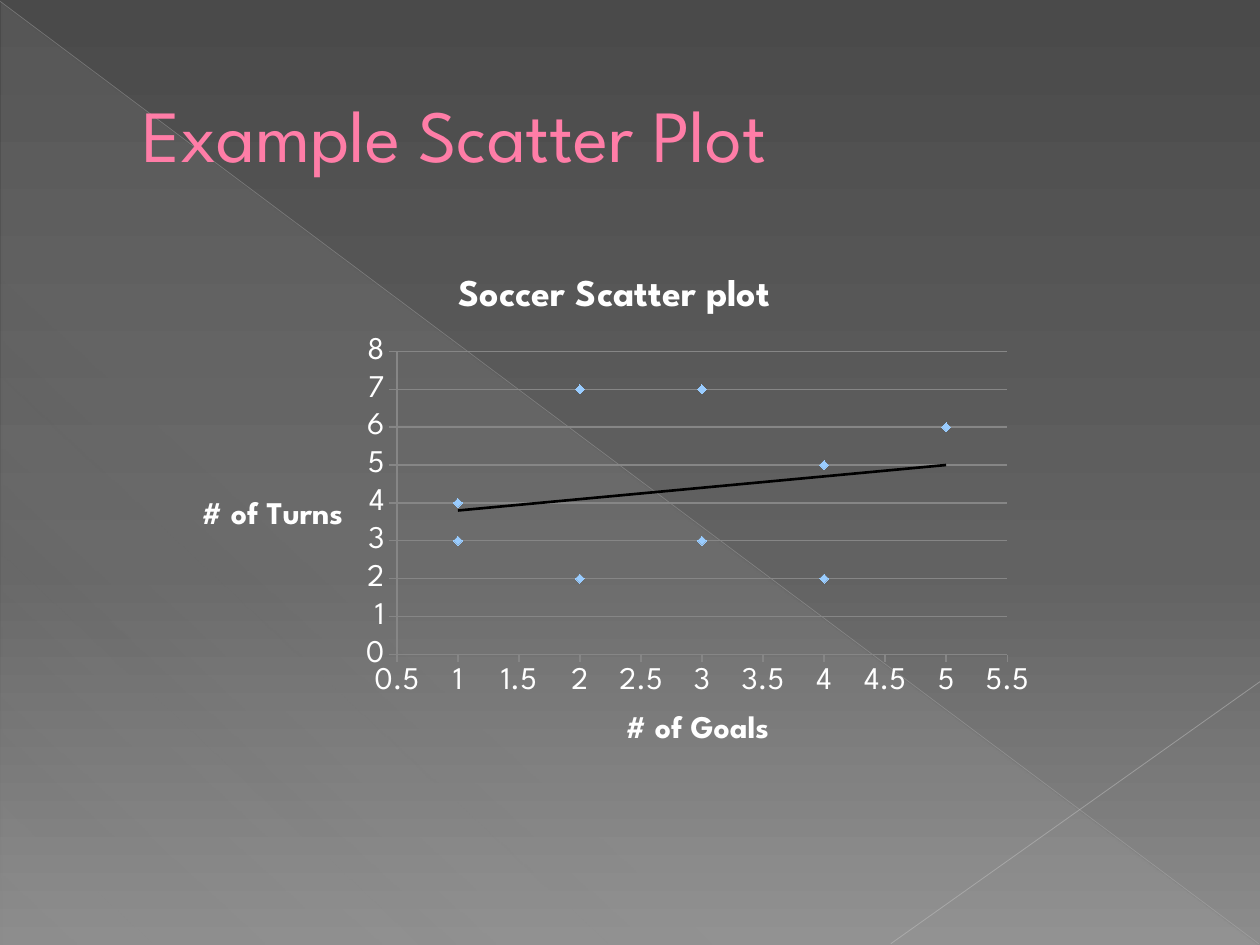
from dataclasses import dataclass
from lxml import etree
from pptx import Presentation
from pptx import util as u
from pptx.chart.data import XyChartData
from pptx.dml.color import RGBColor
from pptx.enum import chart as ch, shapes, text
from pptx.oxml import parse_xml
from pptx.oxml.ns import nsdecls, qn

FONT = "League Spartan"
HUES = {"pink": "FF7DA7", "edge": "B12761", "white": "FFFFFF", "grid": "868686",
        "mark": "99CCFF", "trend": "000000", "dark": "4A4A4A", "mid": "626262",
        "light": "8C8C8C", "pale": "D2D2D2", "slope": "BFBFBF", "rise": "C6C6C6"}
POINTS = [(1, 3), (1, 4), (2, 2), (2, 7), (3, 3), (3, 7), (4, 2), (4, 5), (5, 6)]


@dataclass
class Stop:
    pos: int
    hue: str
    alpha: int = 100


@dataclass
class Ray:
    start: tuple
    end: tuple
    hue: str
    width: float
    alpha: int


@dataclass
class Scale:
    low: float
    high: float
    step: float
    name: str


RAYS = [Ray((0, 0.01), (9.99, 7.49), "slope", 0.39, 35),
        Ray((10, 5.41), (7.07, 7.49), "rise", 0.47, 45)]


def tint(hue: str) -> RGBColor:
    """Return the named colour."""
    return RGBColor.from_string(HUES[hue])


def fade(node, alpha: int) -> None:
    """Set the opacity of a colour element in percent."""
    etree.SubElement(node, qn("a:alpha")).set("val", str(alpha * 1000))


def blend(fill, root, stops: list, angle: int) -> None:
    """Give a fill a linear gradient with any number of stops."""
    fill.gradient()
    grad = next(root.iter(qn("a:gradFill")))
    band = grad.find(qn("a:gsLst"))
    for old in list(band):
        band.remove(old)
    for stop in stops:
        item = etree.SubElement(band, qn("a:gs"), pos=str(stop.pos * 1000))
        node = etree.SubElement(item, qn("a:srgbClr"), val=HUES[stop.hue])
        if stop.alpha < 100:
            fade(node, stop.alpha)
    grad.find(qn("a:lin")).set("ang", str(angle * 60000))


def draw_ray(slide, ray: Ray) -> None:
    """Draw a thin translucent line."""
    ends = [u.Inches(v) for v in ray.start + ray.end]
    line = slide.shapes.add_connector(shapes.MSO_CONNECTOR.STRAIGHT, *ends)
    line.line.width = u.Pt(ray.width)
    line.line.color.rgb = tint(ray.hue)
    fade(next(line._element.spPr.iter(qn("a:srgbClr"))), ray.alpha)
    etree.SubElement(line._element.spPr, qn("a:effectLst"))


def style(font, size: float, hue: str, bold: bool = False) -> None:
    """Set the face, size and colour of a font."""
    font.name, font.size, font.bold = FONT, u.Pt(size), bold
    font.color.rgb = tint(hue)


def add_head(slide, words: str) -> None:
    """Write the slide title."""
    box = slide.shapes.add_textbox(*map(u.Inches, (0.5, 0.29, 9, 1.53)))
    frame = box.text_frame
    frame.word_wrap = True
    frame.vertical_anchor = text.MSO_ANCHOR.MIDDLE
    para = frame.paragraphs[0]
    para._p.get_or_add_pPr().set("marL", str(u.Inches(0.53)))
    run = para.add_run()
    run.text = words
    style(run.font, 42, "pink")
    run._r.rPr.insert(0, parse_xml(
        f'<a:ln {nsdecls("a")} w="{u.Pt(0.5)}"><a:solidFill>'
        f'<a:srgbClr val="{HUES["edge"]}"/></a:solidFill></a:ln>'))


def name_part(part, words: str, size: float) -> None:
    """Give a chart or an axis a bold level title."""
    frame = part.text_frame
    run = frame.paragraphs[0].add_run()
    run.text = words
    style(run.font, size, "white", True)
    frame._txBody.bodyPr.set("rot", "0")
    frame._txBody.bodyPr.set("vert", "horz")


def set_axis(axis, scale: Scale) -> None:
    """Apply range, ticks, lines and title to an axis."""
    axis.minimum_scale, axis.maximum_scale = scale.low, scale.high
    axis.major_unit = scale.step
    axis.major_tick_mark = ch.XL_TICK_MARK.OUTSIDE
    axis.minor_tick_mark = ch.XL_TICK_MARK.NONE
    axis.tick_labels.number_format = "General"
    axis.tick_labels.number_format_is_linked = False
    style(axis.tick_labels.font, 18, "white")
    axis.format.line.color.rgb = tint("grid")
    name_part(axis.axis_title, scale.name, 18)


def add_plot(slide) -> None:
    """Add the scatter chart with its trend line."""
    data = XyChartData()
    serie = data.add_series("Series 1")
    for x, y in POINTS:
        serie.add_data_point(x, y)
    chart = slide.shapes.add_chart(ch.XL_CHART_TYPE.XY_SCATTER,
                                   *map(u.Inches, (1.42, 2, 6.92, 4.15)), data).chart
    style(chart.font, 18, "white")
    chart.has_legend = False
    name_part(chart.chart_title, "Soccer Scatter plot", 21.6)
    set_axis(chart.category_axis, Scale(0.5, 5.5, 0.5, "# of Goals"))
    set_axis(chart.value_axis, Scale(0, 8, 1, "# of Turns"))
    chart.category_axis.has_major_gridlines = False
    chart.value_axis.has_major_gridlines = True
    chart.value_axis.major_gridlines.format.line.color.rgb = tint("grid")

    plot = chart.plots[0]
    plot.vary_by_categories = False
    dots = plot.series[0]
    dots.smooth = False
    dots.format.line.fill.background()
    dots.marker.style = ch.XL_MARKER_STYLE.DIAMOND
    dots.marker.size = 5
    dots.marker.format.fill.solid()
    dots.marker.format.fill.fore_color.rgb = tint("mark")
    dots.marker.format.line.color.rgb = tint("mark")
    dots._element.find(qn("c:xVal")).addprevious(parse_xml(
        f'<c:trendline {nsdecls("c", "a")}><c:spPr><a:ln w="{u.Pt(1.5)}"><a:solidFill>'
        f'<a:srgbClr val="{HUES["trend"]}"/></a:solidFill></a:ln></c:spPr>'
        '<c:trendlineType val="linear"/><c:dispRSqr val="0"/><c:dispEq val="0"/>'
        '</c:trendline>'))

    area = chart._chartSpace.chart.plotArea
    for old in area.findall(qn("c:layout")):
        area.remove(old)
    rules = {"layoutTarget": "inner", "xMode": "edge", "yMode": "edge",
             "x": 0.25, "y": 0.19, "w": 0.7, "h": 0.58}
    parts = "".join(f'<c:{key} val="{val}"/>' for key, val in rules.items())
    area.insert(0, parse_xml(f'<c:layout {nsdecls("c")}><c:manualLayout>{parts}'
                             '</c:manualLayout></c:layout>'))


def main() -> None:
    """Build and save the slide."""
    deck = Presentation()
    deck.slide_width, deck.slide_height = u.Inches(10), u.Inches(7.5)
    slide = deck.slides.add_slide(deck.slide_layouts[6])
    blend(slide.background.fill, slide._element,
          [Stop(0, "dark"), Stop(60, "mid"), Stop(100, "light")], 90)
    wedge = slide.shapes.add_shape(shapes.MSO_SHAPE.RIGHT_TRIANGLE,
                                   *map(u.Inches, (0.01, 0.02, 9.98, 7.48)))
    wedge.shadow.inherit = False
    wedge.line.fill.background()
    blend(wedge.fill, wedge._element,
          [Stop(0, "pale", 10), Stop(70, "pale", 8), Stop(100, "pale", 1)], 133)
    for ray in RAYS:
        draw_ray(slide, ray)
    add_head(slide, "Example Scatter Plot")
    add_plot(slide)
    deck.save("out.pptx")


if __name__ == "__main__":
    main()
